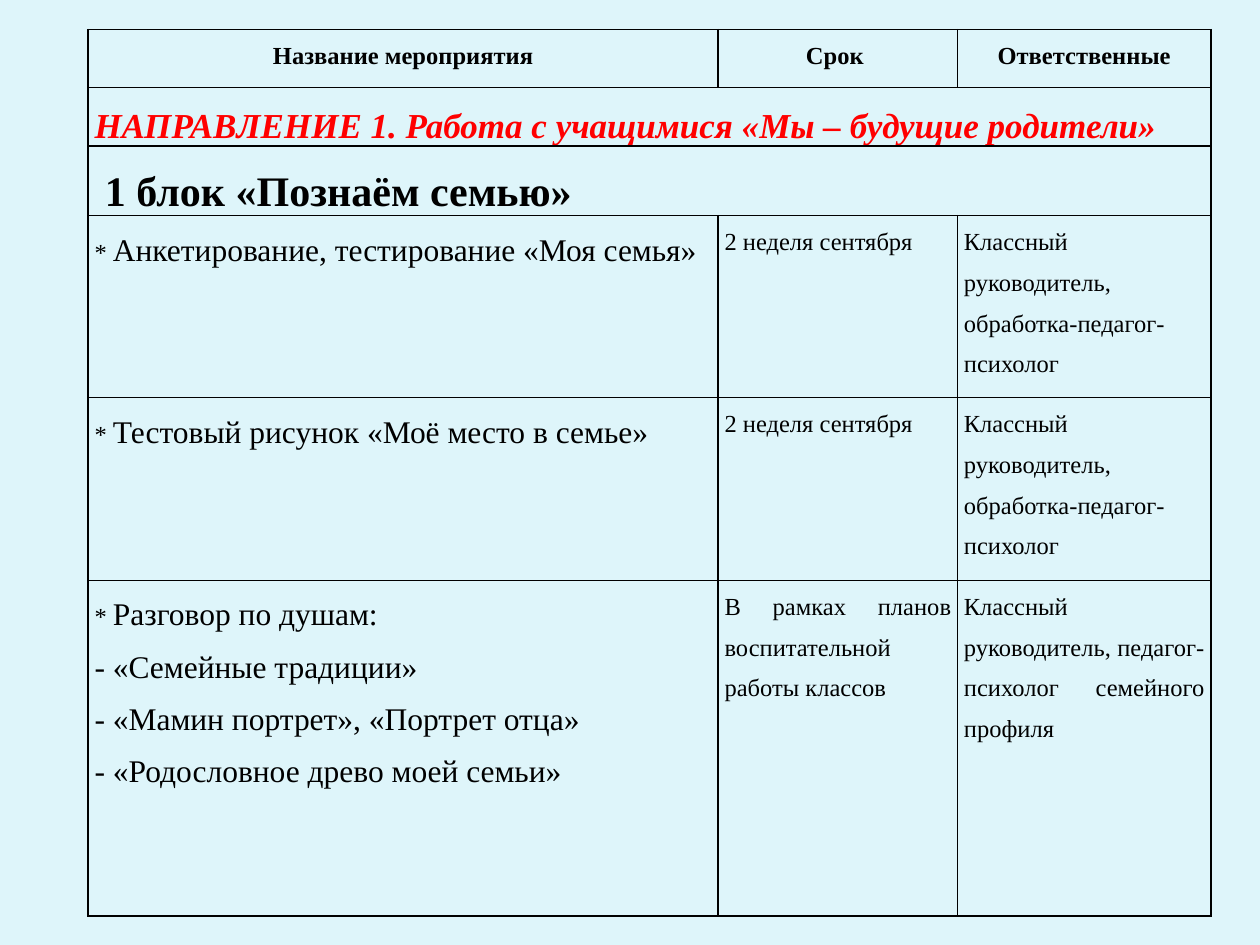
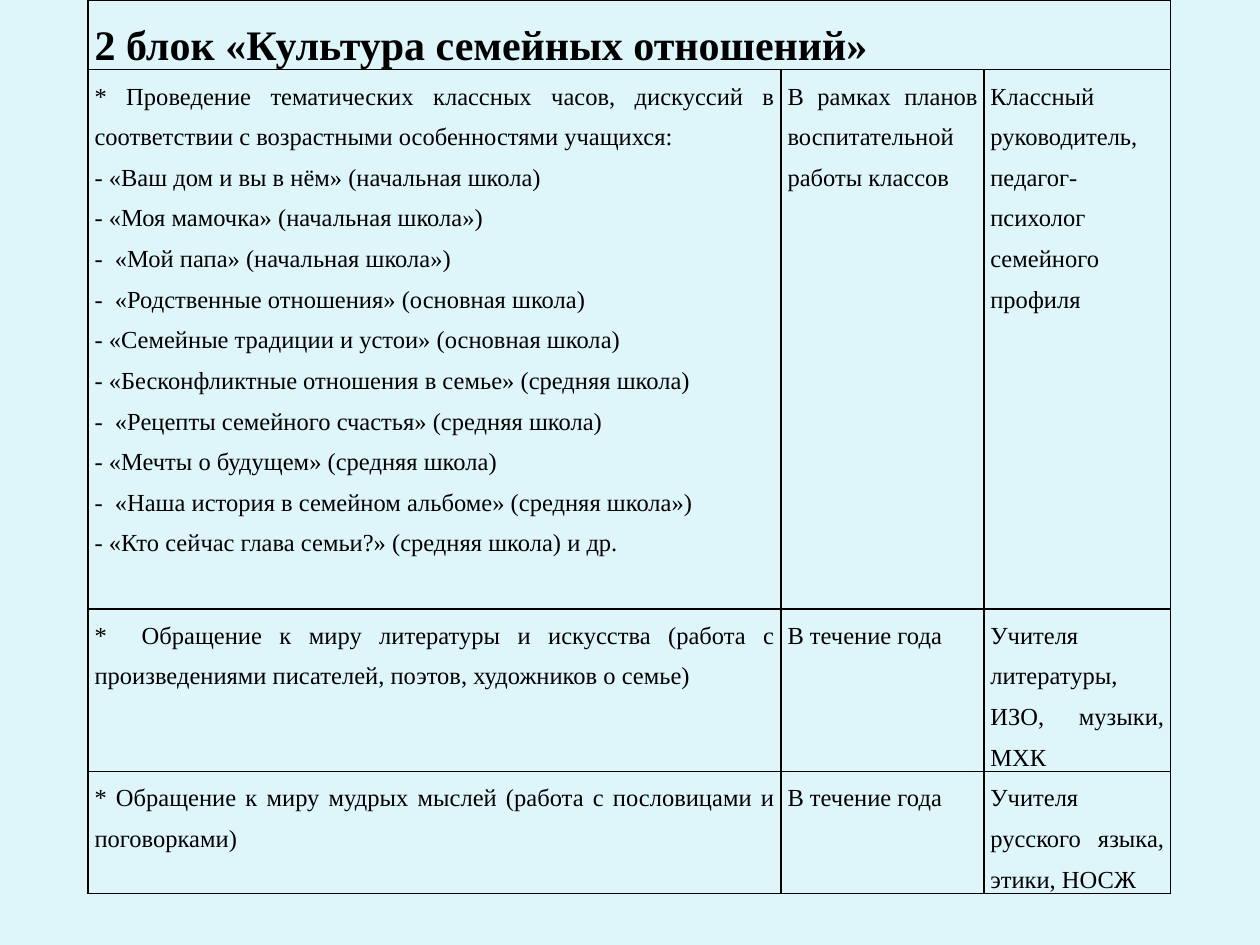
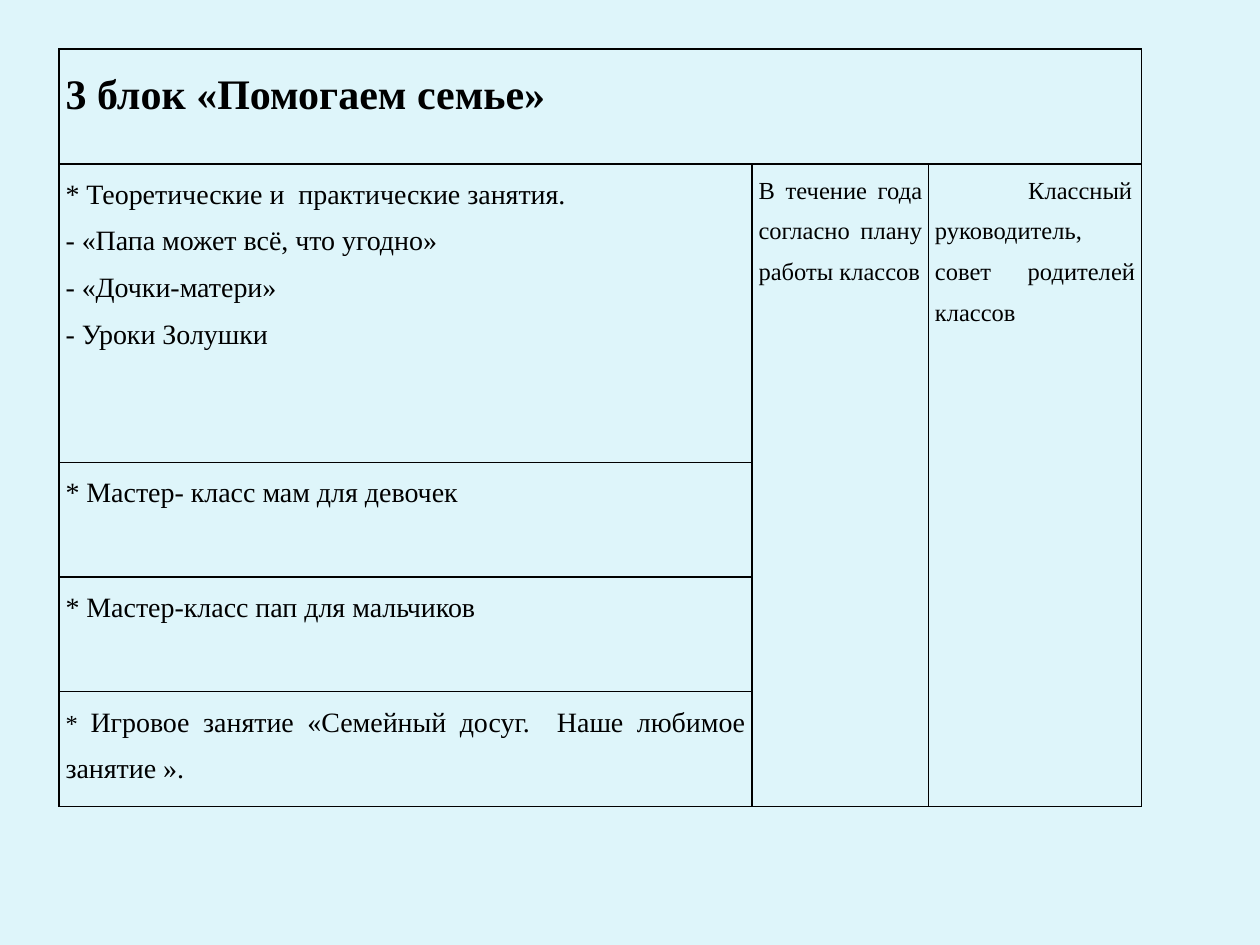
from dataclasses import dataclass, field

from lxml.etree import SubElement
from pptx import Presentation
from pptx.dml.color import RGBColor
from pptx.enum.text import PP_ALIGN
from pptx.oxml.ns import qn
from pptx.util import Inches, Pt

COLORS = {"back": "DEF5FA", "ink": "000000", "accent": "FF0000"}
FONT = "Times New Roman"
GRID_COLS, GRID_ROWS = 100, 75
UNIT = Inches(0.1)
BODY_SIZE = 14
LINE_SPACING = 1.5
BORDER_WIDTH = Pt(1)
MARGINS = {
    "margin_left": Inches(0.05),
    "margin_right": Inches(0.05),
    "margin_top": 0,
    "margin_bottom": 0,
}


@dataclass
class Entry:
    lines: list[str]
    size: int = BODY_SIZE
    bold: bool = False
    italic: bool = False
    color: str = "ink"
    align: PP_ALIGN = PP_ALIGN.JUSTIFY
    small_star: bool = False
    indent: float = 0
    rows: int = 1
    cols: int = 1


@dataclass
class Plan:
    left: float
    top: float
    cols: list[float]
    rows: list[float]
    entries: list[list[Entry]] = field(default_factory=list)


def grid(n: float) -> int:
    return round(n * UNIT)


def column_head(text: str) -> Entry:
    return Entry([text], bold=True, align=PP_ALIGN.CENTER)


def block_head(text: str) -> Entry:
    return Entry([text], size=24, bold=True, cols=3)


def starred(*lines: str, size: int = 18) -> Entry:
    return Entry(list(lines), size=size, small_star=True)


def plain(*lines: str, size: int = BODY_SIZE) -> Entry:
    return Entry(list(lines), size=size)


SEPTEMBER = plain("2 неделя сентября")
ALL_YEAR = plain("В течение года")
CLASS_PLANS = plain("В рамках планов воспитательной работы классов")
TEACHER_TESTS = plain("Классный руководитель, обработка-педагог-психолог")
TEACHER_FAMILY = plain("Классный руководитель, педагог-психолог семейного профиля")

PLANS = [
    Plan(7, 2.35, [50, 19, 20.1], [4.6, 4.6, 4.6, 14.45, 14.5, 26.65], [
        [column_head("Название мероприятия"), column_head("Срок "), column_head("Ответственные")],
        [Entry(["НАПРАВЛЕНИЕ 1. Работа с учащимися «Мы – будущие родители»"],
               size=20, bold=True, italic=True, color="accent", cols=3)],
        [block_head(" 1 блок «Познаём семью»")],
        [starred("Анкетирование, тестирование «Моя семья»"), SEPTEMBER, TEACHER_TESTS],
        [starred("Тестовый рисунок «Моё место в семье»"), SEPTEMBER, TEACHER_TESTS],
        [starred("Разговор по душам:",
                 "- «Семейные традиции»",
                 "- «Мамин портрет», «Портрет отца»",
                 "- «Родословное древо моей семьи»"),
         CLASS_PLANS, TEACHER_FAMILY],
    ]),
    Plan(7, 0, [55, 16.1, 14.8], [4.3, 42.8, 12.1, 8.5], [
        [block_head("2 блок «Культура семейных отношений»")],
        [plain("* Проведение тематических классных часов, дискуссий в соответствии "
               "с возрастными особенностями учащихся:",
               "- «Ваш дом и вы в нём» (начальная школа)",
               "- «Моя мамочка» (начальная школа»)",
               "-  «Мой папа» (начальная школа»)",
               "-  «Родственные отношения» (основная школа)",
               "- «Семейные традиции и устои» (основная школа)",
               "- «Бесконфликтные отношения в семье» (средняя школа)",
               "-  «Рецепты семейного счастья» (средняя школа)",
               "- «Мечты о будущем» (средняя школа)",
               "-  «Наша история в семейном альбоме» (средняя школа»)",
               "- «Кто сейчас глава семьи?» (средняя школа) и др."),
         CLASS_PLANS, TEACHER_FAMILY],
        [plain("*  Обращение к миру литературы и искусства (работа с произведениями "
               "писателей, поэтов, художников о семье)"),
         ALL_YEAR, plain("Учителя литературы, ИЗО, музыки, МХК")],
        [plain("* Обращение к миру мудрых мыслей (работа с пословицами и поговорками)"),
         ALL_YEAR, plain("Учителя русского языка, этики, НОСЖ")],
    ]),
    Plan(4.7, 3.9, [55, 14, 16.9], [9.1, 23.7, 9.1, 9.1, 9.1], [
        [block_head("3 блок «Помогаем семье»")],
        [plain("* Теоретические и  практические занятия.",
               "- «Папа может всё, что угодно»",
               "- «Дочки-матери»",
               "- Уроки Золушки", size=16),
         Entry(["В течение года согласно плану работы классов"], rows=4),
         Entry(["Классный руководитель, совет родителей классов"], indent=7.4, rows=4)],
        [plain("* Мастер- класс мам для девочек", size=16)],
        [plain("* Мастер-класс пап для мальчиков", size=16)],
        [starred("Игровое занятие «Семейный досуг.  Наше любимое занятие ».", size=16)],
    ]),
]


def add_run(p, text: str, entry: Entry, size: int) -> None:
    r = p.add_run()
    r.text = text
    formats = {"name": FONT, "size": Pt(size), "bold": entry.bold, "italic": entry.italic}
    for name, value in formats.items():
        setattr(r.font, name, value)
    r.font.color.rgb = RGBColor.from_string(COLORS[entry.color])


def write_entry(cell, entry: Entry) -> None:
    tf = cell.text_frame
    for i, line in enumerate(entry.lines):
        p = tf.paragraphs[0] if i == 0 else tf.add_paragraph()
        p.alignment = entry.align
        p.line_spacing = LINE_SPACING
        if entry.indent:
            p._p.get_or_add_pPr().set("indent", str(grid(entry.indent)))
        if entry.small_star and i == 0:
            add_run(p, "* ", entry, BODY_SIZE)
        add_run(p, line, entry, entry.size)


def style_cell(cell) -> None:
    for name, value in MARGINS.items():
        setattr(cell, name, value)
    tc_pr = cell._tc.get_or_add_tcPr()
    for side in ("a:lnL", "a:lnR", "a:lnT", "a:lnB"):
        ln = SubElement(tc_pr, qn(side), w=str(BORDER_WIDTH))
        SubElement(SubElement(ln, qn("a:solidFill")), qn("a:srgbClr"), val=COLORS["ink"])
    cell.fill.background()


def add_plan(s, plan: Plan) -> None:
    table = s.shapes.add_table(
        len(plan.rows), len(plan.cols), grid(plan.left), grid(plan.top),
        grid(sum(plan.cols)), grid(sum(plan.rows))).table
    table.first_row = table.horz_banding = False
    for column, width in zip(table.columns, plan.cols):
        column.width = grid(width)
    for row, height in zip(table.rows, plan.rows):
        row.height = grid(height)
    for cell in table.iter_cells():
        style_cell(cell)
    for i, entries in enumerate(plan.entries):
        for j, entry in enumerate(entries):
            cell = table.cell(i, j)
            if entry.rows > 1 or entry.cols > 1:
                cell.merge(table.cell(i + entry.rows - 1, j + entry.cols - 1))
            write_entry(cell, entry)


def main() -> None:
    prs = Presentation()
    prs.slide_width, prs.slide_height = grid(GRID_COLS), grid(GRID_ROWS)
    fill = prs.slide_master.background.fill
    fill.solid()
    fill.fore_color.rgb = RGBColor.from_string(COLORS["back"])
    for plan in PLANS:
        add_plan(prs.slides.add_slide(prs.slide_layouts[6]), plan)
    prs.save("out.pptx")


if __name__ == "__main__":
    main()
